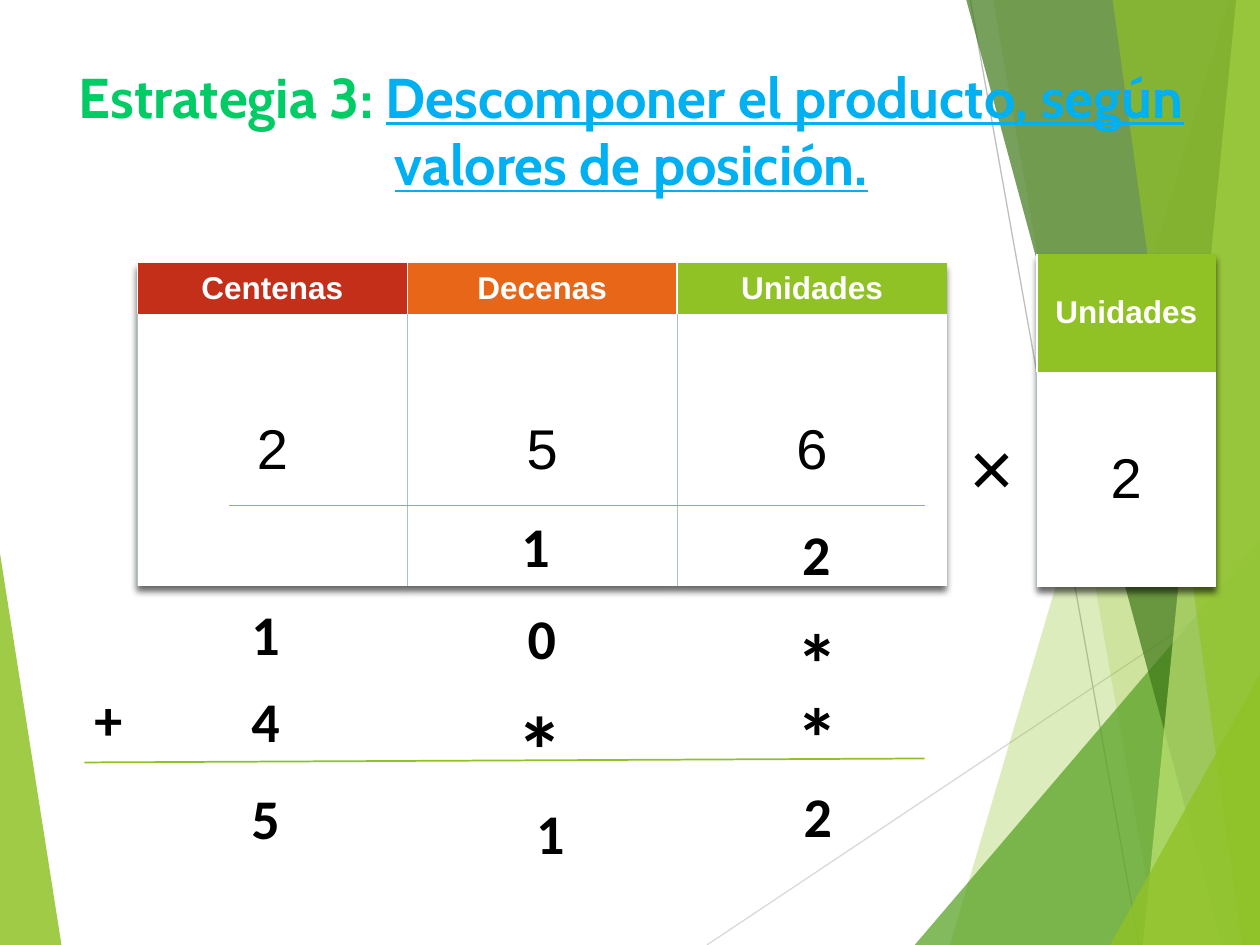
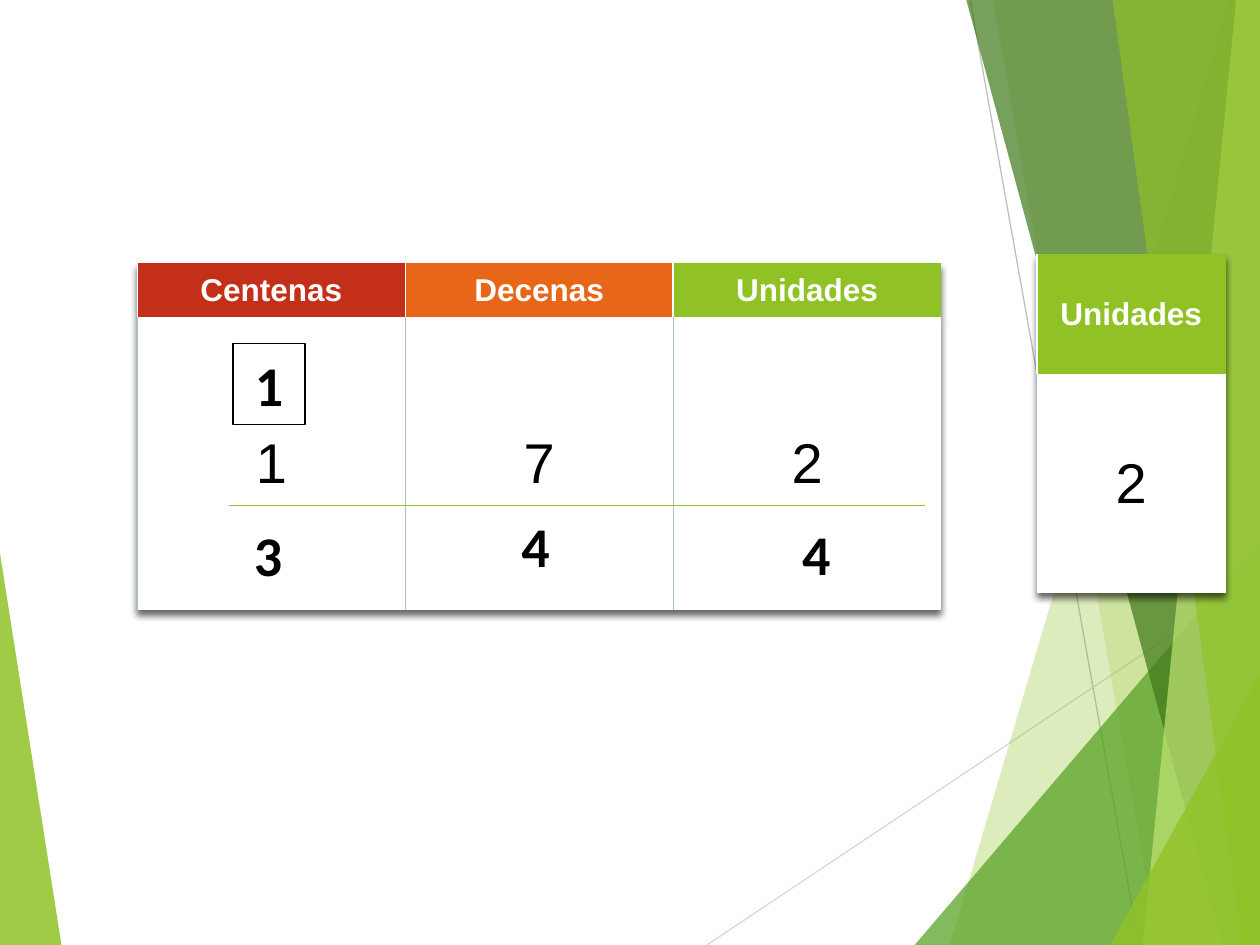
from lxml.etree import SubElement
from pptx import Presentation
from pptx.dml.color import RGBColor
from pptx.enum.shapes import MSO_CONNECTOR, MSO_SHAPE
from pptx.enum.text import MSO_ANCHOR, MSO_AUTO_SIZE, PP_ALIGN
from pptx.oxml.ns import qn
from pptx.util import Cm, Pt

HUES = {
    "lime": "90C226", "leaf": "54A021", "moss": "3F7819", "pale": "C0E474",
    "red": "C42F1A", "orange": "E76618", "white": "FFFFFF", "black": "000000",
    "rule": "ABC2C5", "light": "D9D9D9", "grey": "BFBFBF",
    "green": "00CC66", "blue": "00B0F0",
}
WIDE, HIGH = 25.4, 19.05


def strip(top, foot):
    """Outline from a slanted left side to the right slide edge."""
    return [(top, 0), (foot, HIGH), (WIDE, HIGH), (WIDE, 0)]


def wedge(foot, rise):
    """Triangle in the lower right corner."""
    return [(foot, HIGH), (WIDE, rise), (WIDE, HIGH)]


# outline, colour, opacity in percent
LEFT = ([(0, 11.15), (1.24, HIGH), (0, HIGH)], "lime", 85)
BANDS = [
    (strip(24.77, 19.15), "lime", 30),
    (strip(20.02, 23.34), "lime", 20),
    (wedge(18.44, 10.9), "leaf", 72),
    (strip(19.48, 24.64), "moss", 70),
    (strip(24.92, 23.04), "pale", 70),
    (strip(22.43, 25.04), "lime", 65),
    (wedge(22.38, 13.59), "lime", 80),
]
RAYS = [((14.25, HIGH), (WIDE, 11.61), "light"), ((19.56, 0), (22.96, HIGH), "grey")]

TITLE = [("Estrategia 3: ", "green", False),
         ("Descomponer el producto, según valores de posición.", "blue", True)]
HEADS = [("Centenas", "red"), ("Decenas", "orange"), ("Unidades", "lime")]
TABLE, FACTOR = (2.77, 5.31), (20.9, 5.13)
BAR = ((4.62, 10.19), (18.64, 10.19))
MARK = 2.59

# tables: place, heads, digits, column width, row heights
# marks: text, left, top, size
SLIDES = [
    {
        "title": TITLE,
        "tables": [(TABLE, HEADS, "256", 5.44, (1.02, 5.49)),
                   (FACTOR, HEADS[2:], "2", 3.61, (2.36, 4.34))],
        "bars": [BAR, ((1.7, 15.37), (18.64, 15.29))],
        "marks": [
            ("1", 9.5, 10.19, 32), ("2", 15.16, 10.34, 32),
            ("1", 4.06, 11.96, 32), ("0", 9.63, 12.04, 32), ("*", 15.19, 12.19, 48),
            ("+", 0.89, 13.67, 32), ("4", 4.06, 13.72, 32),
            ("*", 9.6, 13.79, 54), ("*", 15.19, 13.67, 48),
            ("5", 4.06, 15.67, 32), ("1", 9.8, 15.98, 32), ("2", 15.19, 15.62, 32),
        ],
        "times": ("×", 19.3, 8.33, 44),
    },
    {
        "tables": [(TABLE, HEADS, "172", 5.4, (1.09, 5.9)),
                   (FACTOR, HEADS[2:], "2", 3.81, (2.41, 4.42))],
        "bars": [BAR],
        "marks": [("4", 9.5, 10.19, 32), ("4", 15.16, 10.34, 32), ("3", 4.11, 10.36, 32)],
        "carry": ("1", 4.7, 6.93, 1.45, 1.63),
    },
]


def rgb(hue):
    return RGBColor.from_string(HUES[hue])


def style(run, size, hue, font, bold=True):
    run.font.size, run.font.name, run.font.bold = Pt(size), font, bold
    run.font.color.rgb = rgb(hue)


def write(frame, text, size, hue="black", font="Calibri", bold=True, align=PP_ALIGN.CENTER):
    frame.text = text
    para = frame.paragraphs[0]
    para.alignment = align
    style(para.runs[0], size, hue, font, bold)


def draw_line(slide, start, end, hue, width):
    ends = [Cm(n) for n in (*start, *end)]
    line = slide.shapes.add_connector(MSO_CONNECTOR.STRAIGHT, *ends)
    line.line.color.rgb, line.line.width = rgb(hue), Pt(width)
    SubElement(line.element.spPr, qn("a:effectLst"))
    return line


def draw_band(slide, points, hue, alpha):
    spots = [(Cm(x), Cm(y)) for x, y in points]
    pen = slide.shapes.build_freeform(*spots[0], scale=1.0)
    pen.add_line_segments(spots[1:], close=True)
    band = pen.convert_to_shape()
    band.shadow.inherit = False
    band.fill.solid()
    band.fill.fore_color.rgb = rgb(hue)
    band.line.fill.background()
    tint = band.element.spPr.find(qn("a:solidFill"))[0]
    SubElement(tint, qn("a:alpha"), val=str(alpha * 1000))
    return band


def dress(deck, slide):
    """Draw the backdrop and move it to the slide master."""
    parts = [draw_band(slide, *LEFT)]
    parts += [draw_line(slide, *ray, 0.75) for ray in RAYS]
    parts += [draw_band(slide, *band) for band in BANDS]
    tree = deck.slide_master.element.cSld.spTree
    for i, part in enumerate(parts):
        part.element.xpath(".//p:cNvPr")[0].set("id", str(100 + i))
        tree.insert(2 + i, part.element)


def edge(cell, side, hue, width):
    props = cell._tc.get_or_add_tcPr()
    line = SubElement(props, qn("a:" + side), w=str(Pt(width)))
    fill = SubElement(line, qn("a:solidFill"))
    SubElement(fill, qn("a:srgbClr"), val=HUES[hue])


def shade(props):
    """Give a table a soft shadow and no grid."""
    grid = props.find(qn("a:tableStyleId"))
    grid.text = "{2D5ABB26-0587-4C30-8999-92F81FD0307C}"
    list_ = SubElement(props, qn("a:effectLst"))
    cast = SubElement(list_, qn("a:outerShdw"), blurRad="50800", dist="38100",
                      dir="5400000", algn="t", rotWithShape="0")
    tint = SubElement(cast, qn("a:srgbClr"), val=HUES["black"])
    SubElement(tint, qn("a:alpha"), val="60000")
    props.insert(0, list_)


def add_grid(slide, place, heads, digits, width, rows):
    count = len(heads)
    box = [Cm(n) for n in (*place, width * count, sum(rows))]
    table = slide.shapes.add_table(2, count, *box).table
    shade(table._tbl.tblPr)
    for row, high in zip(table.rows, rows):
        row.height = Cm(high)
    for col, ((head, hue), digit) in enumerate(zip(heads, digits)):
        table.columns[col].width = Cm(width)
        looks = [(head, 18, "white", True, hue, "white", 1),
                 (digit, 32, "black", False, "white", "rule", 0.5)]
        for row, (text, size, ink, bold, back, rim, thick) in enumerate(looks):
            cell = table.cell(row, col)
            write(cell.text_frame, text, size, ink, "Arial", bold)
            cell.vertical_anchor = MSO_ANCHOR.MIDDLE
            edge(cell, "lnL", rim, thick)
            if col < count - 1:
                edge(cell, "lnR", rim, thick)
            cell.fill.solid()
            cell.fill.fore_color.rgb = rgb(back)


def add_mark(slide, text, left, top, size, width=MARK, **look):
    high = 0.043 * size + 0.25
    box = slide.shapes.add_textbox(Cm(left), Cm(top), Cm(width), Cm(high))
    box.text_frame.word_wrap = True
    write(box.text_frame, text, size, **look)


def add_carry(slide, text, *box):
    shape = slide.shapes.add_shape(MSO_SHAPE.RECTANGLE, *[Cm(n) for n in box])
    shape.shadow.inherit = False
    shape.fill.background()
    shape.line.color.rgb, shape.line.width = rgb("black"), Pt(0.75)
    write(shape.text_frame, text, 32)


def set_title(title, parts):
    title.left, title.top, title.width, title.height = Cm(1.3), Cm(1.02), Cm(22.86), Cm(3.18)
    frame = title.text_frame
    frame.auto_size, frame.vertical_anchor = MSO_AUTO_SIZE.NONE, MSO_ANCHOR.MIDDLE
    para = frame.paragraphs[0]
    para.alignment = PP_ALIGN.CENTER
    for text, hue, under in parts:
        run = para.add_run()
        run.text = text
        style(run, 32, hue, "Cabin")
        run.font.underline = under


def main():
    deck = Presentation()
    deck.slide_width, deck.slide_height = Cm(WIDE), Cm(HIGH)
    for data in SLIDES:
        slide = deck.slides.add_slide(deck.slide_layouts[5 if "title" in data else 6])
        if data is SLIDES[0]:
            dress(deck, slide)
        if "title" in data:
            set_title(slide.shapes.title, data["title"])
        for grid in data["tables"]:
            add_grid(slide, *grid)
        for start, end in data["bars"]:
            draw_line(slide, start, end, "lime", 1)
        for mark in data["marks"]:
            add_mark(slide, *mark)
        if "times" in data:
            add_mark(slide, *data["times"], width=1.4, font="Arial", bold=False,
                     align=PP_ALIGN.LEFT)
        if "carry" in data:
            add_carry(slide, *data["carry"])
    deck.save("out.pptx")


if __name__ == "__main__":
    main()
